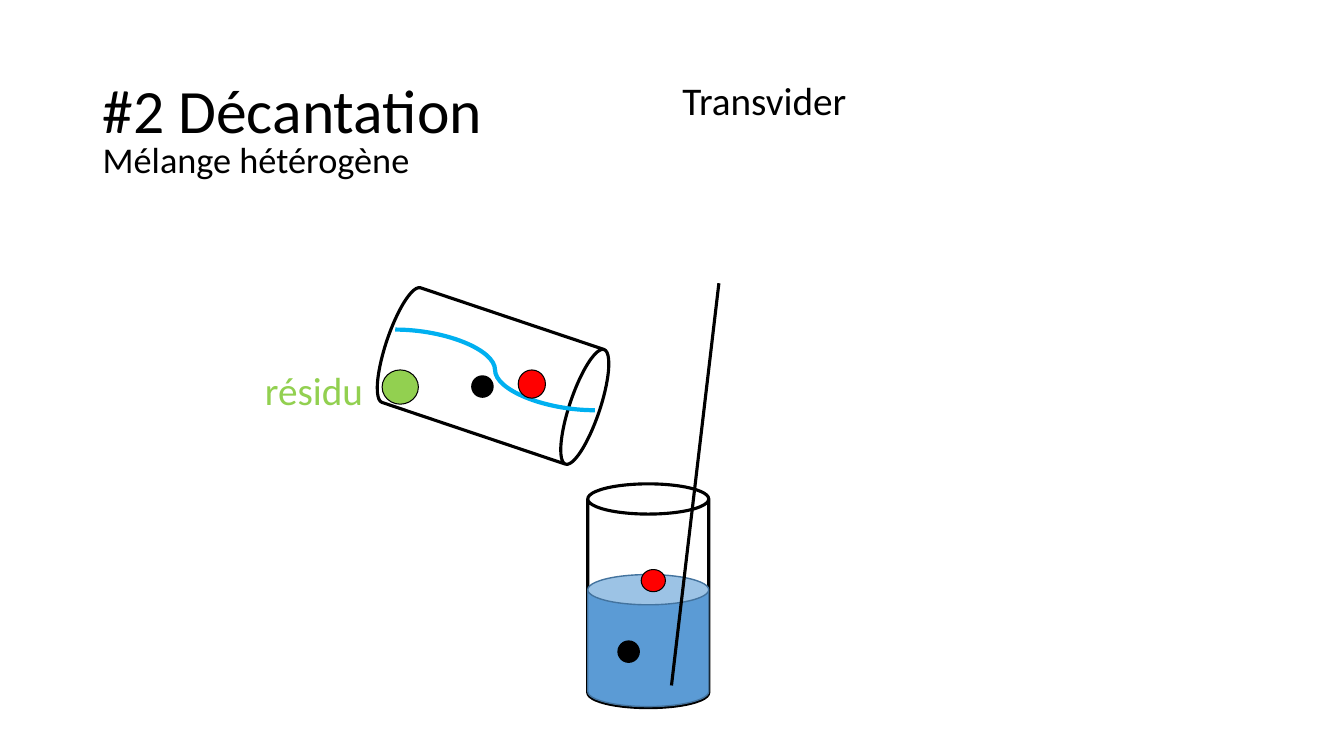
from lxml.etree import SubElement
from pptx import Presentation
from pptx.dml.color import RGBColor
from pptx.enum.shapes import MSO_CONNECTOR, MSO_SHAPE
from pptx.enum.text import MSO_ANCHOR
from pptx.oxml.ns import qn
from pptx.util import Inches, Pt

BLACK, WHITE, RED, GREEN = "000000", "FFFFFF", "FF0000", "92D050"


def color(hex_value):
    return RGBColor.from_string(hex_value)


prs = Presentation()
prs.slide_width = Inches(13.33)
prs.slide_height = Inches(7.5)
slide = prs.slides.add_slide(prs.slide_layouts[6])

labels = [
    ("#2 Décantation", (0.92, 0.4, 11.5, 1.45), 44, BLACK, MSO_ANCHOR.MIDDLE, 0),
    ("Transvider", (6.67, 0.76, 2.04, 0.72), 28, BLACK, MSO_ANCHOR.TOP, 10),
    ("Mélange hétérogène", (0.92, 1.36, 3.35, 0.72), 25.9, BLACK, MSO_ANCHOR.TOP, 10),
    ("résidu", (2.53, 3.64, 1.26, 0.72), 28, GREEN, MSO_ANCHOR.TOP, 10),
]
for wording, box, size, ink, anchor, space_before in labels:
    frame = slide.shapes.add_textbox(*map(Inches, box)).text_frame
    frame.word_wrap = True
    frame.vertical_anchor = anchor
    paragraph = frame.paragraphs[0]
    paragraph.line_spacing = 0.9
    paragraph.space_before = Pt(space_before)
    run = paragraph.add_run()
    run.text = wording
    run.font.name = "Calibri"
    run.font.size = Pt(size)
    run.font.color.rgb = color(ink)

CAN, BALL = MSO_SHAPE.CAN, MSO_SHAPE.OVAL
tilted_beaker = [(CAN, (4.29, 2.62, 1.2, 2.22), WHITE, BLACK, 2.25, 108.6)]
receiving_beaker = [
    (CAN, (5.83, 4.8, 1.2, 2.22), WHITE, BLACK, 2.25, 0),
    (CAN, (5.83, 5.7, 1.2, 1.31), "5B9BD5", "43739E", 1, 0),
]
water_surface = [(MSO_CONNECTOR.CURVE, (3.92, 3.27, 5.9, 4.07), "00B0F0", 3)]
particles = [
    (BALL, (4.68, 3.73, 0.21, 0.21), BLACK, BLACK, 1, 0),
    (BALL, (5.14, 3.67, 0.27, 0.28), RED, BLACK, 0.75, 0),
    (BALL, (3.79, 3.67, 0.36, 0.34), GREEN, BLACK, 0.75, 0),
    (BALL, (6.13, 6.36, 0.21, 0.21), BLACK, BLACK, 1, 0),
    (BALL, (6.36, 5.65, 0.24, 0.22), RED, BLACK, 0.75, 0),
]
stirring_rod = [(MSO_CONNECTOR.STRAIGHT, (7.13, 2.81, 6.66, 6.8), BLACK, 2.25)]

for part in tilted_beaker + receiving_beaker + water_surface + particles + stirring_rod:
    kind, place, *look = part
    if kind in (CAN, BALL):
        fill, ink, width, angle = look
        drawn = slide.shapes.add_shape(kind, *map(Inches, place))
        drawn.shadow.inherit = False
        drawn.fill.solid()
        drawn.fill.fore_color.rgb = color(fill)
        drawn.rotation = angle
    else:
        ink, width = look
        drawn = slide.shapes.add_connector(kind, *map(Inches, place))
        SubElement(drawn.line._get_or_add_ln().getparent(), qn("a:effectLst"))
    drawn.line.color.rgb = color(ink)
    drawn.line.width = Pt(width)

prs.save("out.pptx")
